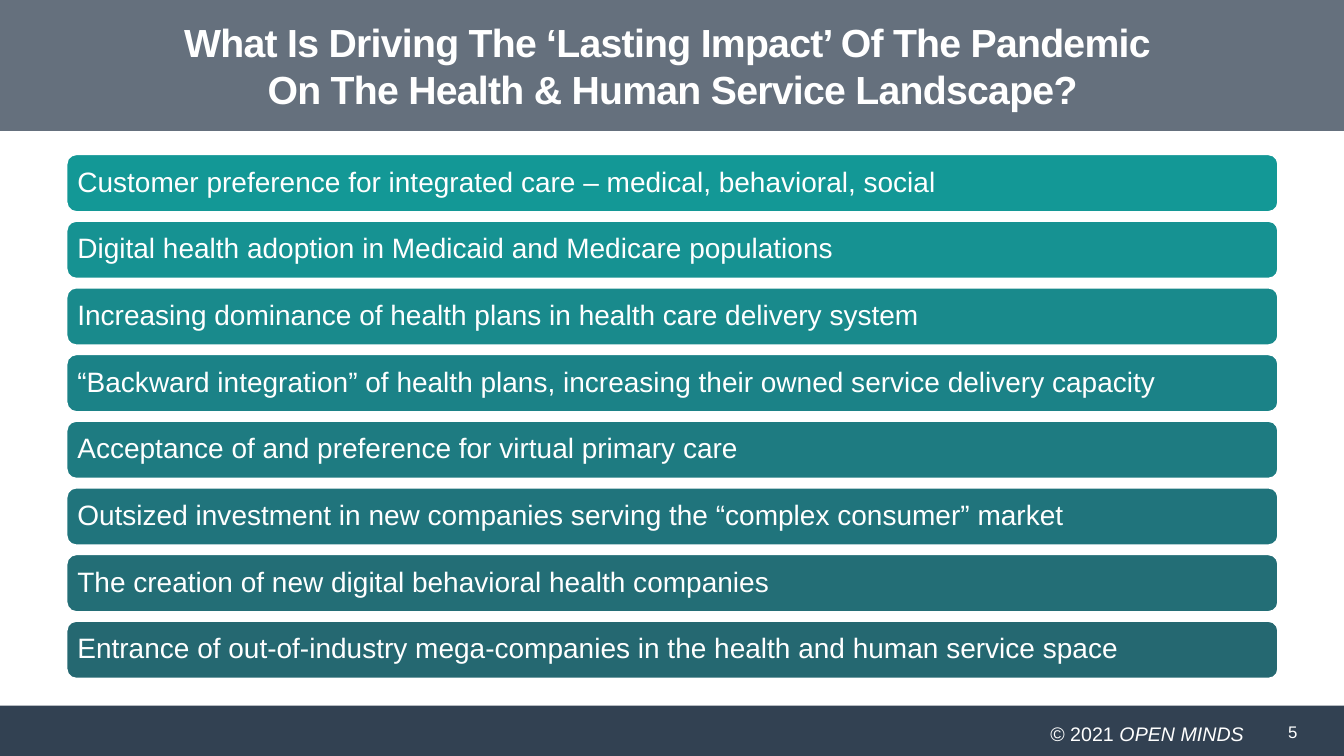
from lxml.etree import SubElement as Sub
from pptx import Presentation
from pptx.dml.color import RGBColor as RGB
from pptx.enum.shapes import MSO_SHAPE as Kind
from pptx.enum.text import MSO_ANCHOR as Anchor, MSO_AUTO_SIZE as Fit, PP_ALIGN as Align
from pptx.oxml.ns import qn
from pptx.util import Cm, Pt

WHITE = RGB(0xFF, 0xFF, 0xFF)
NAVY = RGB(0x32, 0x41, 0x52)

DRIVERS = [
    ("Customer preference for integrated care – medical, behavioral, social", RGB(0x13, 0x98, 0x96)),
    ("Digital health adoption in Medicaid and Medicare populations", RGB(0x16, 0x92, 0x92)),
    ("Increasing dominance of health plans in health care delivery system", RGB(0x19, 0x8A, 0x8C)),
    ("“Backward integration” of health plans, increasing their owned service delivery capacity", RGB(0x1B, 0x82, 0x87)),
    ("Acceptance of and preference for virtual primary care", RGB(0x1E, 0x7B, 0x81)),
    ("Outsized investment in new companies serving the “complex consumer” market", RGB(0x20, 0x74, 0x7C)),
    ("The creation of new digital behavioral health companies", RGB(0x23, 0x6E, 0x76)),
    ("Entrance of out-of-industry mega-companies in the health and human service space", RGB(0x25, 0x68, 0x71)),
]


def style(shape, size, align, pad, bold=False):
    frame = shape.text_frame
    form = {
        "word_wrap": True, "auto_size": Fit.NONE, "vertical_anchor": Anchor.MIDDLE,
        "margin_left": pad, "margin_right": pad,
        "margin_top": Cm(0.1), "margin_bottom": Cm(0.1),
    }
    for key, value in form.items():
        setattr(frame, key, value)
    para = frame.paragraphs[0]
    para.alignment = align
    for run in para.runs:
        for key, value in {"name": "Arial", "size": Pt(size), "bold": bold}.items():
            setattr(run.font, key, value)
        run.font.color.rgb = WHITE
    return para


def block(kind, left, top, width, height, color):
    shape = slide.shapes.add_shape(kind, Cm(left), Cm(top), Cm(width), Cm(height))
    shape.shadow.inherit = False
    shape.fill.solid()
    shape.fill.fore_color.rgb = color
    shape.line.fill.background()
    return shape


deck = Presentation()
deck.slide_width, deck.slide_height = Cm(33.87), Cm(19.05)
slide = deck.slides.add_slide(deck.slide_layouts[5])

block(Kind.RECTANGLE, 0, 17.78, 33.87, 1.27, NAVY)
band = block(Kind.RECTANGLE, 0, -0.02, 33.87, 3.32, NAVY)
tint = band._element.spPr.find(qn("a:solidFill")).find(qn("a:srgbClr"))
Sub(tint, qn("a:alpha"), val="75000")

title = slide.shapes.title
place = {"left": Cm(1.68), "top": Cm(0.25), "width": Cm(30.53), "height": Cm(2.8)}
for key, value in place.items():
    setattr(title, key, value)
title.text_frame.text = (
    "What Is Driving The ‘Lasting Impact’ Of The Pandemic \v"
    "On The Health & Human Service Landscape?"
)
head = style(title, 28, Align.CENTER, Cm(0.25), True)
for run in head.runs:
    run.font._element.set("spc", "-50")
slide.shapes._spTree.append(title._element)

for row, (text, color) in enumerate(DRIVERS):
    bar = block(Kind.ROUNDED_RECTANGLE, 1.68, 3.89 + 1.68 * row, 30.53, 1.45, color)
    bar.line.color.rgb = WHITE
    bar.line.width = Pt(1.25)
    bar.text_frame.text = text
    style(bar, 20, Align.LEFT, Cm(0.2)).line_spacing = 0.9

credit = slide.shapes.add_textbox(Cm(4.45), Cm(18.08), Cm(27.13), Cm(0.82))
line = credit.text_frame.paragraphs[0]
for text, slant in [("© 2021 ", False), ("OPEN MINDS", True)]:
    run = line.add_run()
    run.text = text
    run.font.italic = slant
style(credit, 14, Align.RIGHT, Cm(0.23))

page = slide.shapes.add_textbox(Cm(32.21), Cm(17.93), Cm(1.6), Cm(1.02))
page.text_frame.text = "5"
style(page, 12, Align.LEFT, Cm(0.25))

deck.save("out.pptx")
